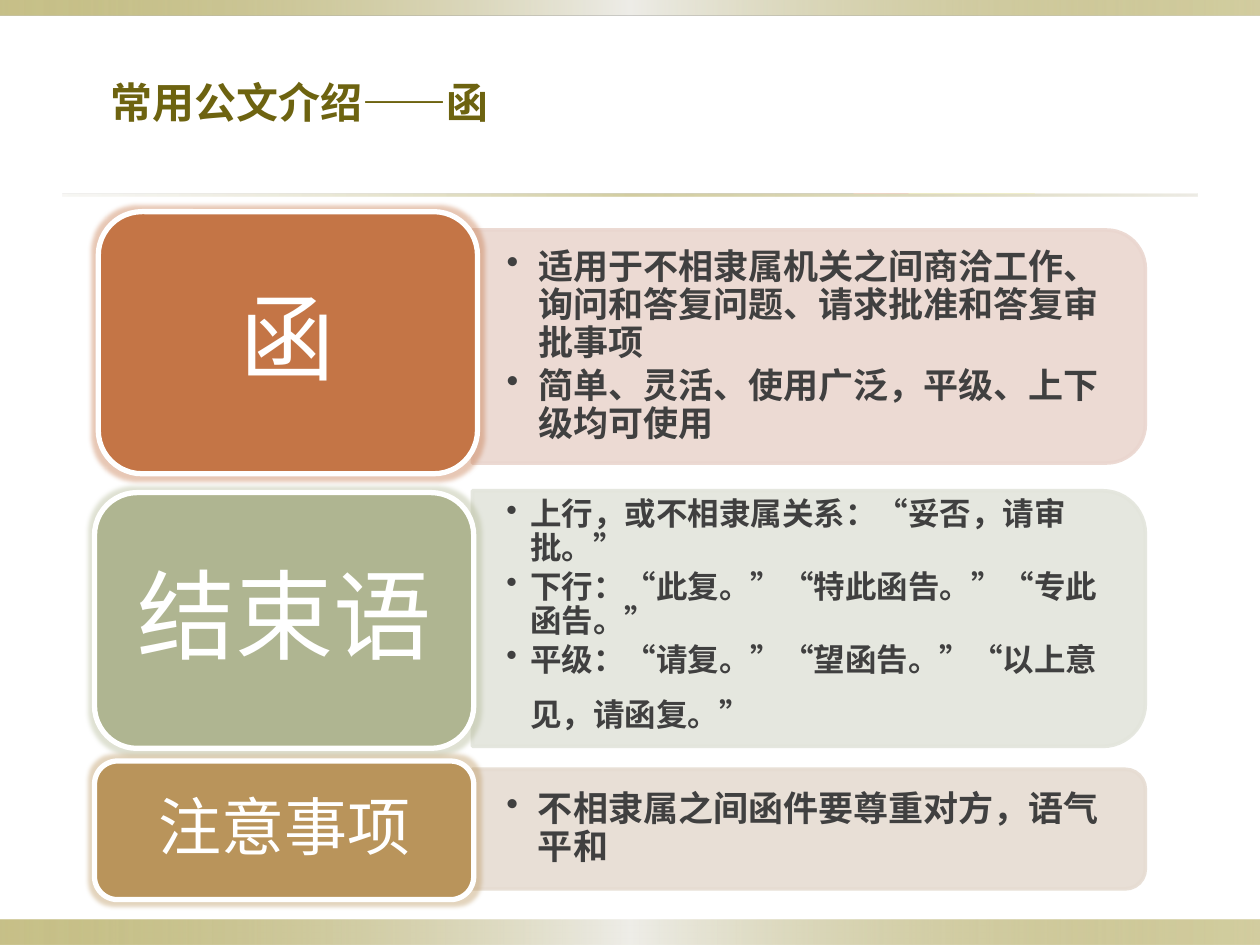
from lxml.etree import SubElement
from pptx import Presentation
from pptx.dml.color import RGBColor
from pptx.enum.shapes import MSO_SHAPE
from pptx.enum.text import MSO_ANCHOR, PP_ALIGN
from pptx.oxml import parse_xml
from pptx.oxml.ns import nsdecls, qn
from pptx.util import Inches, Pt

WHITE = RGBColor(0xFF, 0xFF, 0xFF)
OLIVE = RGBColor(0x6D, 0x63, 0x10)
DARK = RGBColor(0x40, 0x40, 0x40)
BODY_FONT, CJK_FONT = "Karla", "Noto Sans CJK SC"

TITLE = "常用公文介绍——函"
BAND_STOPS = [(0, "918415", 50), (50, "EEEDE8", 100), (100, "918415", 40)]
RULE_STOPS = [(0, "DCD9CC", 20), (50, "918415", 40), (100, "DCD9CC", 50)]
STRIPS = [
    ((0, 7.3, 10, 0.2), BAND_STOPS),
    ((0, 0, 10, 0.12), BAND_STOPS),
    ((0.5, 1.54, 9, 0.02), RULE_STOPS),
]

PANEL_LEFT, PANEL_WIDTH = 3.75, 5.34
SECTIONS = [
    {"label": "函", "label_size": 54, "label_box": (0.78, 1.68, 3.01, 2.08),
     "color": RGBColor(0xC4, 0x75, 0x46), "tint": RGBColor(0xEA, 0xD6, 0xCF),
     "middle": 2.75, "panel_height": 1.85, "text_area": (5.25, 1.67),
     "size": 20, "indent": 0.25,
     "points": ["适用于不相隶属机关之间商洽工作、询问和答复问题、请求批准和答复审批事项",
                "简单、灵活、使用广泛，平级、上下级均可使用"]},
    {"label": "结束语", "label_size": 56, "label_box": (0.75, 3.91, 3.01, 2.03),
     "color": RGBColor(0xAF, 0xB5, 0x91), "tint": RGBColor(0xE3, 0xE5, 0xDC),
     "middle": 4.91, "panel_height": 2.03, "text_area": (5.24, 1.83),
     "size": 18, "indent": 0.19, "last_line_size": 32,
     "points": ["上行，或不相隶属关系：“妥否，请审批。”",
                "下行：“此复。”“特此函告。”“专此函告。”",
                "平级：“请复。”“望函告。”“以上意见，请函复。”"]},
    {"label": "注意事项", "label_size": 36, "label_box": (0.75, 6.04, 3.01, 1.1),
     "color": RGBColor(0xB9, 0x94, 0x5B), "tint": RGBColor(0xE6, 0xDC, 0xD2),
     "middle": 6.58, "panel_height": 0.95, "text_area": (5.3, 0.85),
     "size": 20, "indent": 0.25,
     "points": ["不相隶属之间函件要尊重对方，语气平和"]},
]


def add_block(s, preset, box, fill=None, line=None, width=0):
    sp = s.shapes.add_shape(preset, *map(Inches, box))
    sp.shadow.inherit = False
    if fill is not None:
        sp.fill.solid()
        sp.fill.fore_color.rgb = fill
    if line is None:
        sp.line.fill.background()
    else:
        sp.line.color.rgb = line
        sp.line.width = Pt(width)
    return sp


def add_strip(s, box, stops):
    sp = add_block(s, MSO_SHAPE.RECTANGLE, box)
    stop_xml = "".join(
        f'<a:gs pos="{pos * 1000}"><a:srgbClr val="{color}">'
        f'<a:alpha val="{alpha * 1000}"/></a:srgbClr></a:gs>'
        for pos, color, alpha in stops)
    gradient = parse_xml(f'<a:gradFill {nsdecls("a")}><a:gsLst>{stop_xml}</a:gsLst>'
                         '<a:lin ang="0" scaled="0"/></a:gradFill>')
    sp._element.spPr.find(qn("a:prstGeom")).addnext(gradient)


def add_text_box(s, box, inset=(0.1, 0.05)):
    """Add a wrapping, middle-anchored text frame with (side, top) insets."""
    tf = s.shapes.add_textbox(*map(Inches, box)).text_frame
    side, top = map(Inches, inset)
    settings = {"word_wrap": True, "vertical_anchor": MSO_ANCHOR.MIDDLE,
                "margin_left": side, "margin_right": side,
                "margin_top": top, "margin_bottom": top}
    for name, value in settings.items():
        setattr(tf, name, value)
    return tf


def add_run(p, text, color, **font):
    r = p.add_run()
    r.text = text
    for name, value in font.items():
        setattr(r.font, name, value)
    r.font.color.rgb = color
    SubElement(r.font._element, qn("a:ea"), typeface=CJK_FONT)


def add_panel(s, sec):
    height, middle = sec["panel_height"], sec["middle"]
    center = PANEL_LEFT + PANEL_WIDTH / 2
    box = (center - height / 2, middle - PANEL_WIDTH / 2, height, PANEL_WIDTH)
    sp = add_block(s, MSO_SHAPE.ROUND_2_SAME_RECTANGLE, box, sec["tint"], sec["tint"], 2)
    sp.rotation = 90
    for color in sp._element.spPr.iter(qn("a:srgbClr")):
        SubElement(color, qn("a:alpha"), val="90000")


def add_points(s, sec):
    width, height = sec["text_area"]
    tf = add_text_box(s, (PANEL_LEFT, sec["middle"] - height / 2, width, height), (0.27, 0.14))
    for i, point in enumerate(sec["points"]):
        p = tf.paragraphs[0] if i == 0 else tf.add_paragraph()
        p.level, p.line_spacing = 1, 0.9
        p.space_after = Pt(sec["size"] * 0.15)
        pPr = p._p.get_or_add_pPr()
        pPr.set("marL", str(Inches(sec["indent"])))
        pPr.set("indent", str(-Inches(sec["indent"])))
        SubElement(pPr, qn("a:buChar"), char="•")
        add_run(p, point, DARK, size=Pt(sec["size"]), name=BODY_FONT, bold=True)
    if "last_line_size" in sec:
        add_run(p, " ", DARK, size=Pt(sec["last_line_size"]), name=BODY_FONT)


def add_label(s, sec):
    left, top, width, height = sec["label_box"]
    sp = add_block(s, MSO_SHAPE.ROUNDED_RECTANGLE, sec["label_box"], sec["color"], WHITE, 3)
    effects = sp._element.spPr.find(qn("a:effectLst"))
    glow = SubElement(effects, qn("a:glow"), rad=str(Pt(5)))
    color = SubElement(glow, qn("a:srgbClr"), val=str(sec["color"]))
    SubElement(color, qn("a:alpha"), val="40000")

    corner = height * 0.05
    inset = sec["label_size"] * 0.3 / 72
    tf = add_text_box(s, (left + corner, top + corner, width - 2 * corner, height - 2 * corner),
                      (inset, inset / 2))
    p = tf.paragraphs[0]
    p.alignment, p.line_spacing = PP_ALIGN.CENTER, 0.9
    p.space_after = Pt(sec["label_size"] * 0.35)
    add_run(p, sec["label"], WHITE, size=Pt(sec["label_size"]), name=BODY_FONT)


def main():
    prs = Presentation()
    prs.slide_width, prs.slide_height = Inches(10), Inches(7.5)
    s = prs.slides.add_slide(prs.slide_layouts[6])
    for box, stops in STRIPS:
        add_strip(s, box, stops)
    title = add_text_box(s, (0.78, 0.56, 5.95, 0.5))
    add_run(title.paragraphs[0], TITLE, OLIVE, size=Pt(24), name=CJK_FONT, bold=True)
    for sec in SECTIONS:
        add_panel(s, sec)
        add_points(s, sec)
        add_label(s, sec)
    prs.save("out.pptx")


if __name__ == "__main__":
    main()
